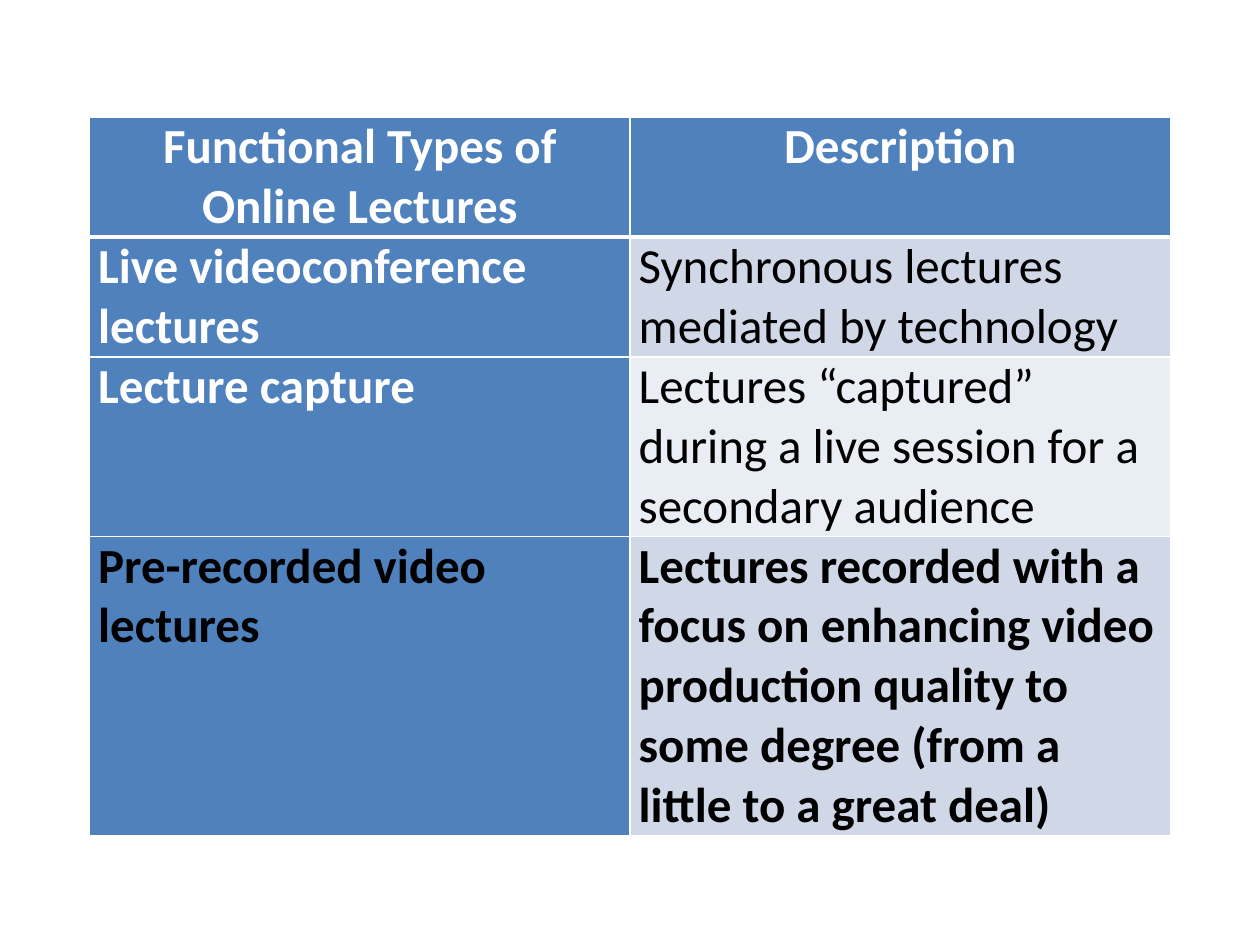
from dataclasses import dataclass

import pptx
import pptx.dml.color
import pptx.enum.text
import pptx.oxml
import pptx.oxml.ns
import pptx.util

Inches = pptx.util.Inches
Pt = pptx.util.Pt
RGBColor = pptx.dml.color.RGBColor


@dataclass(frozen=True)
class Theme:
    font: str = "Calibri"
    size: int = 28
    accent: str = "4F81BD"
    bands: tuple = ("D0D8E8", "E9EDF4")
    light: str = "FFFFFF"
    dark: str = "000000"
    thin: int = 1
    thick: int = 3


THEME = Theme()
HEADER = ("Functional Types of Online Lectures", "Description")
LECTURE_TYPES = (
    ("Live videoconference lectures", "Synchronous lectures mediated by technology"),
    ("Lecture capture",
     "Lectures “captured” during a live session for a secondary audience"),
    ("Pre-recorded video lectures",
     "Lectures recorded with a focus on enhancing video production quality "
     "to some degree (from a little to a great deal)"),
)
ROW_HEIGHTS = (0.95, 0.95, 1.42, 2.37)


def set_borders(cell, top, bottom):
    tcPr = cell._tc.get_or_add_tcPr()
    widths = {"L": THEME.thin, "R": THEME.thin, "T": top, "B": bottom}
    for i, (side, width) in enumerate(widths.items()):
        ln = pptx.oxml.parse_xml(
            f'<a:ln{side} {pptx.oxml.ns.nsdecls("a")} w="{Pt(width)}">'
            f'<a:solidFill><a:srgbClr val="{THEME.light}"/></a:solidFill>'
            f'</a:ln{side}>')
        tcPr.insert(i, ln)


def fill_cell(cell, text, fill, color, bold, centered=False):
    cell.margin_left = cell.margin_right = Inches(0.07)
    cell.margin_top = cell.margin_bottom = 0
    cell.fill.solid()
    cell.fill.fore_color.rgb = RGBColor.from_string(fill)
    p = cell.text_frame.paragraphs[0]
    if centered:
        p.alignment = pptx.enum.text.PP_ALIGN.CENTER
    r = p.add_run()
    r.text = text
    r.font.name = THEME.font
    r.font.size = Pt(THEME.size)
    r.font.bold = bold
    r.font.color.rgb = RGBColor.from_string(color)


def add_lecture_table(slide, left, top, width, height):
    rows = (HEADER, *LECTURE_TYPES)
    table = slide.shapes.add_table(
        len(rows), len(HEADER), left, top, width, height).table
    for column in table.columns:
        column.width = width // len(HEADER)
    for row, share in zip(table.rows, ROW_HEIGHTS):
        row.height = int(height * share / sum(ROW_HEIGHTS))

    for i, texts in enumerate(rows):
        is_header = i == 0
        is_focus = i == len(rows) - 1
        for j, text in enumerate(texts):
            cell = table.cell(i, j)
            is_accent = is_header or j == 0
            fill = THEME.accent if is_accent else THEME.bands[(i - 1) % 2]
            color = THEME.light if is_accent and not is_focus else THEME.dark
            fill_cell(cell, text, fill, color, is_accent or is_focus, is_header)
            set_borders(cell,
                        top=THEME.thick if i == 1 else THEME.thin,
                        bottom=THEME.thick if is_header else THEME.thin)


def main():
    prs = pptx.Presentation()
    prs.slide_width, prs.slide_height = Inches(10), Inches(7.5)
    slide = prs.slides.add_slide(prs.slide_layouts[6])
    add_lecture_table(slide, Inches(0.71), Inches(0.93),
                      Inches(8.58), Inches(sum(ROW_HEIGHTS)))
    prs.save("out.pptx")


if __name__ == "__main__":
    main()
